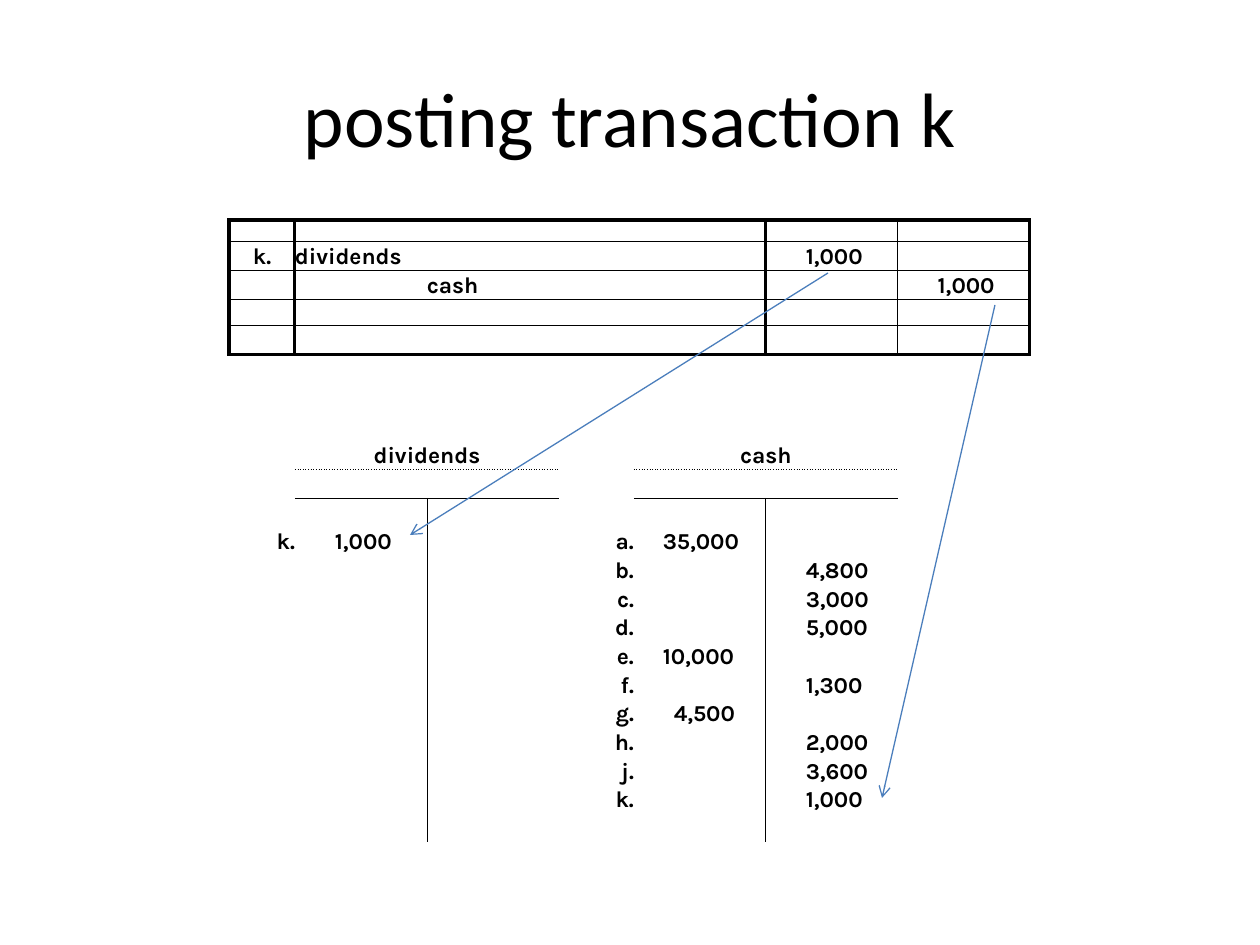
from lxml.etree import SubElement
from pptx import Presentation
from pptx.dml.color import RGBColor
from pptx.enum.shapes import MSO_CONNECTOR
from pptx.enum.text import MSO_ANCHOR, PP_ALIGN
from pptx.oxml.ns import qn
from pptx.util import Emu, Pt

PX = 914400 / 126
THEME = {
    "ink": "000000", "arrow": "4B7EBC",
    "title_font": "Calibri", "ledger_font": "Karla",
    "title_size": 44, "ledger_size": 13, "empty_size": 8,
    "thick": 2, "thin": 0.5, "arrow_width": 0.75,
}


def px(length):
    return Emu(round(length * PX))


def draw_border(cell, side, width, dash="solid"):
    line = SubElement(cell._tc.get_or_add_tcPr(), qn(f"a:ln{side}"), w=str(Pt(width)))
    if not width:
        SubElement(line, qn("a:noFill"))
        return
    fill = SubElement(line, qn("a:solidFill"))
    SubElement(fill, qn("a:srgbClr"), val=THEME["ink"])
    SubElement(line, qn("a:prstDash"), val=dash)


deck = Presentation()
deck.slide_width, deck.slide_height = px(1260), px(945)
page = deck.slides.add_slide(deck.slide_layouts[5])

# Title
title = page.shapes.title
title.left, title.top, title.width, title.height = px(63), px(38), px(1134), px(158)
title.text_frame.vertical_anchor = MSO_ANCHOR.MIDDLE
para = title.text_frame.paragraphs[0]
para.alignment = PP_ALIGN.CENTER
span = para.add_run()
span.text = "posting transaction k"
title_format = {"name": THEME["title_font"], "size": Pt(THEME["title_size"])}
for name, value in title_format.items():
    setattr(span.font, name, value)
span.font.color.rgb = RGBColor.from_string(THEME["ink"])

# Table grid: five journal rows, then evenly spaced account rows
column_widths = [66, 132, 132, 75, 132, 132, 132]
journal_heights = [21, 29, 29, 26, 30]
account_rows, accounts_height = 17, 488
row_heights = journal_heights + [accounts_height / account_rows] * account_rows
last_journal_edge = len(journal_heights)
name_row, bar_edge, first_entry_row = 8, 10, 11

frame = page.shapes.add_table(len(row_heights), len(column_widths), px(229), px(220),
                              px(sum(column_widths)), px(sum(row_heights)))
ledger = frame.table
ledger.first_row = ledger.horz_banding = False
for column, width in zip(ledger.columns, column_widths):
    column.width = px(width)
for row, height in zip(ledger.rows, row_heights):
    row.height = px(height)

# Entries: (row, column) -> text, alignment, left indent
entries = {
    (1, 0): ("k.", PP_ALIGN.CENTER, 0),
    (1, 1): ("dividends", PP_ALIGN.LEFT, 0),
    (2, 2): ("cash", PP_ALIGN.LEFT, 0),
}
for column, account in [(1, "dividends"), (4, "cash")]:
    entries[name_row, column] = (account, PP_ALIGN.CENTER, 0)
    ledger.cell(name_row, column).merge(ledger.cell(name_row, column + 1))

amounts = {(1, 5): "1,000", (2, 6): "1,000", (first_entry_row, 1): "1,000"}
entries[first_entry_row, 0] = ("k.", PP_ALIGN.RIGHT, 0)
DEBIT, CREDIT = 4, 5
cash_postings = [
    ("a.", DEBIT, "35,000"), ("b.", CREDIT, "4,800"), ("c.", CREDIT, "3,000"),
    ("d.", CREDIT, "5,000"), ("e.", DEBIT, "10,000"), ("f.", CREDIT, "1,300"),
    ("g.", DEBIT, "4,500"), ("h.", CREDIT, "2,000"), ("j.", CREDIT, "3,600"),
    ("k.", CREDIT, "1,000"),
]
for row, (letter, side, amount) in enumerate(cash_postings, first_entry_row):
    entries[row, 3] = (letter, PP_ALIGN.RIGHT, 0)
    amounts[row, side] = amount
for place, amount in amounts.items():
    entries[place] = (amount, PP_ALIGN.LEFT, 40 if len(amount) == 5 else 29)

# Border rules, by grid edge
horizontal, vertical = {}, {}
for column in range(len(column_widths)):
    for edge in range(last_journal_edge + 1):
        outer = edge in (0, last_journal_edge)
        horizontal[edge, column] = (THEME["thick" if outer else "thin"],)
for column in (1, 2, 4, 5):
    horizontal[name_row + 1, column] = (THEME["thin"], "sysDot")
    horizontal[bar_edge, column] = (THEME["thin"],)
for row in range(last_journal_edge):
    for edge in (0, 1, 5, 6, 7):
        vertical[row, edge] = (THEME["thin" if edge == 6 else "thick"],)
for row in range(bar_edge, len(row_heights)):
    for edge in (2, 5):
        vertical[row, edge] = (THEME["thin"],)

# Fill in and outline every cell
entry_format = {"name": THEME["ledger_font"], "size": Pt(THEME["ledger_size"]), "bold": True}
for row in range(len(row_heights)):
    for column in range(len(column_widths)):
        cell = ledger.cell(row, column)
        text, alignment, indent = entries.get((row, column), ("", PP_ALIGN.LEFT, 0))
        cell_format = {"margin_left": px(indent), "margin_right": 0, "margin_top": 0,
                       "margin_bottom": 0, "vertical_anchor": MSO_ANCHOR.BOTTOM}
        for name, value in cell_format.items():
            setattr(cell, name, value)
        draw_border(cell, "L", *vertical.get((row, column), (0,)))
        draw_border(cell, "R", *vertical.get((row, column + 1), (0,)))
        draw_border(cell, "T", *horizontal.get((row, column), (0,)))
        draw_border(cell, "B", *horizontal.get((row + 1, column), (0,)))
        cell.fill.background()
        para = cell.text_frame.paragraphs[0]
        if not text:
            SubElement(para._p, qn("a:endParaRPr"), sz=str(THEME["empty_size"] * 100))
            continue
        para.alignment = alignment
        span = para.add_run()
        span.text = text
        for name, value in entry_format.items():
            setattr(span.font, name, value)
        span.font.color.rgb = RGBColor.from_string(THEME["ink"])

# Arrows from the journal to the accounts
for ends in [(828, 273, 410, 535), (995, 305, 882, 798)]:
    arrow = page.shapes.add_connector(MSO_CONNECTOR.STRAIGHT, *map(px, ends))
    arrow.line.color.rgb = RGBColor.from_string(THEME["arrow"])
    arrow.line.width = Pt(THEME["arrow_width"])
    SubElement(arrow.line._get_or_add_ln(), qn("a:tailEnd"), type="arrow")
    SubElement(arrow._element.spPr, qn("a:effectLst"))

deck.save("out.pptx")
